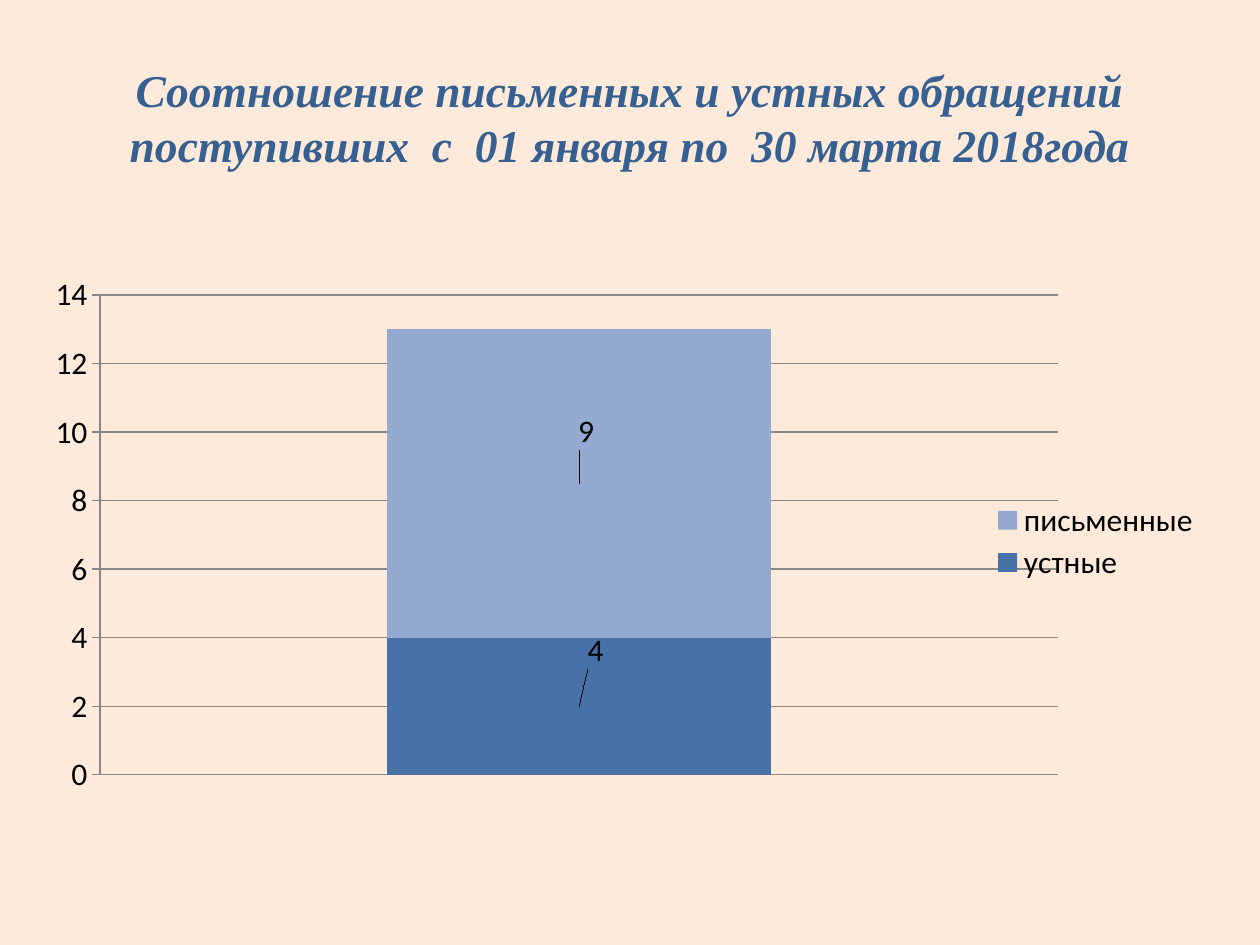
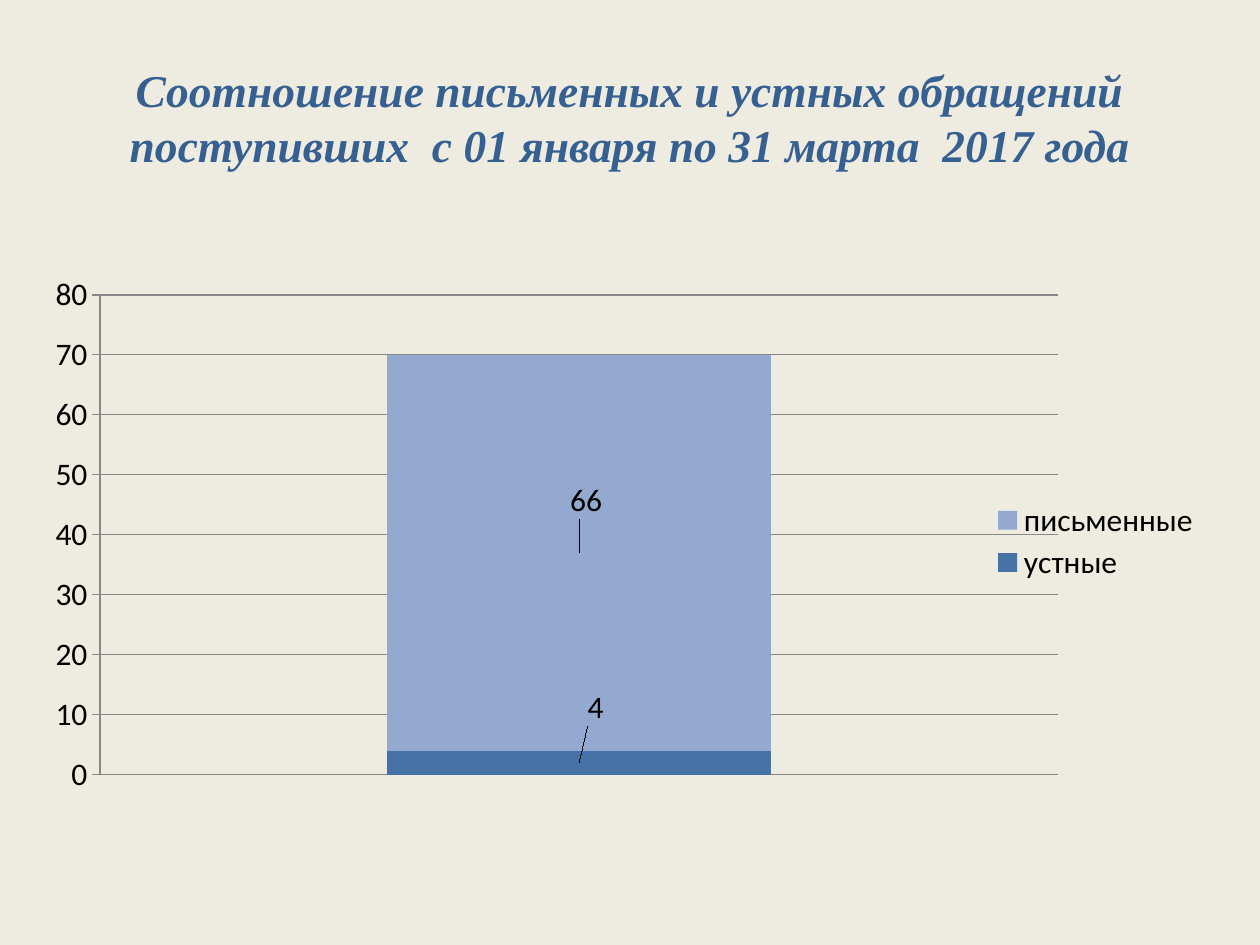
from dataclasses import dataclass

from lxml import etree
from pptx import Presentation
from pptx.chart.data import CategoryChartData
from pptx.dml.color import RGBColor
from pptx.enum.chart import XL_CHART_TYPE, XL_LABEL_POSITION, XL_LEGEND_POSITION, XL_TICK_MARK
from pptx.enum.text import MSO_ANCHOR, MSO_AUTO_SIZE, PP_ALIGN
from pptx.oxml.ns import qn
from pptx.util import Inches, Pt

STACKED = XL_CHART_TYPE.COLUMN_STACKED
LABEL_CENTER = XL_LABEL_POSITION.CENTER
LEGEND_RIGHT = XL_LEGEND_POSITION.RIGHT
TICK_OUT, TICK_NONE = XL_TICK_MARK.OUTSIDE, XL_TICK_MARK.NONE
MIDDLE, CENTER = MSO_ANCHOR.MIDDLE, PP_ALIGN.CENTER
NO_AUTOFIT = MSO_AUTO_SIZE.NONE
TITLE_ONLY = 5
COLS, ROWS = 100, 75


@dataclass(frozen=True)
class Theme:
    """Colours, fonts and type sizes shared by the slides."""
    title: str = "376092"
    text: str = "000000"
    grid: str = "878787"
    oral: str = "4672A8"
    written: str = "93A9CF"
    title_font: str = "Times New Roman"
    chart_font: str = "Calibri"
    title_size: int = 26
    chart_size: int = 18


THEME = Theme()
TITLE_BOX = (5, 3, 90, 12.5)
CHART_BOX = (2.3, 21.9, 93.8, 43.3)
PLOT_AREA = dict(x=6, y=2.7, w=81.1, h=88.7)
LEGEND_AREA = dict(x=81.5, y=40, w=17.5, h=16.5)
SERIES_COLORS = {"устные": THEME.oral, "письменные": THEME.written}
LABEL_SHIFTS = (dict(x=1.4, y=-10.3), dict(x=0.6, y=-9.6))

SLIDES = (
    dict(background="FDEADA", values=(4, 9), top=14, step=2,
         title="Соотношение письменных и устных обращений "
               "поступивших  с  01 января по  30 марта 2018года"),
    dict(background="EEECE1", values=(4, 66), top=80, step=10,
         title="Соотношение письменных и устных обращений\n"
               "поступивших  с 01 января по 31 марта  2017 года"),
)


def to_emu(prs, box):
    """Turn a box in grid columns and rows into slide lengths."""
    col, row = prs.slide_width / COLS, prs.slide_height / ROWS
    return [int(n * unit) for n, unit in zip(box, (col, row, col, row))]


def write_text(tf, text, font, size, color, bold=False, italic=False, align=CENTER):
    """Write formatted text as one paragraph, with line breaks at newlines."""
    p = tf.paragraphs[0]
    p.alignment = align
    for i, line in enumerate(text.split("\n")):
        if i:
            p.add_line_break()
        r = p.add_run()
        r.text = line
        r.font.name, r.font.size = font, Pt(size)
        r.font.bold, r.font.italic = bold, italic
        r.font.color.rgb = RGBColor.from_string(color)


def set_layout(parent, index, area, modes=()):
    """Place a chart part by percentages of the chart's size."""
    for old in parent.findall(qn("c:layout")):
        parent.remove(old)
    layout = etree.Element(qn("c:layout"))
    manual = etree.SubElement(layout, qn("c:manualLayout"))
    for tag, value in modes:
        etree.SubElement(manual, qn(f"c:{tag}")).set("val", value)
    for tag, percent in area.items():
        etree.SubElement(manual, qn(f"c:{tag}")).set("val", f"{percent / 100:.3f}")
    parent.insert(index, layout)


def set_line(line):
    """Give an axis or grid line the thin grey style."""
    line.color.rgb = RGBColor.from_string(THEME.grid)
    line.width = Pt(0.75)


def add_title(s, box, text):
    """Fill the title placeholder inside the box."""
    sp = s.shapes.title
    sp.left, sp.top, sp.width, sp.height = box
    tf = sp.text_frame
    tf.word_wrap, tf.auto_size, tf.vertical_anchor = True, NO_AUTOFIT, MIDDLE
    write_text(tf, text, THEME.title_font, THEME.title_size, THEME.title,
               bold=True, italic=True)


def format_axes(chart, top, step):
    """Hide the category axis and scale the value axis."""
    chart.category_axis.visible = False
    axis = chart.value_axis
    axis.minimum_scale, axis.maximum_scale, axis.major_unit = 0, top, step
    axis.major_tick_mark, axis.minor_tick_mark = TICK_OUT, TICK_NONE
    axis.has_major_gridlines = True
    set_line(axis.format.line)
    set_line(axis.major_gridlines.format.line)


def format_series(plot):
    """Colour the stacked parts and label their values."""
    plot.gap_width, plot.overlap, plot.vary_by_categories = 150, 100, False
    for series in plot.series:
        series.format.fill.solid()
        series.format.fill.fore_color.rgb = RGBColor.from_string(SERIES_COLORS[series.name])
        series.data_labels.show_value = True
        series.points[0].data_label.position = LABEL_CENTER


def add_ratio_chart(s, box, values, top, step):
    """Add the stacked column of oral and written requests."""
    data = CategoryChartData()
    data.categories = ["1"]
    for name, value in zip(SERIES_COLORS, values):
        data.add_series(name, [value])
    chart = s.shapes.add_chart(STACKED, *box, data).chart
    chart.has_title = False
    chart.font.name, chart.font.size = THEME.chart_font, Pt(THEME.chart_size)
    chart.font.color.rgb = RGBColor.from_string(THEME.text)
    format_axes(chart, top, step)
    format_series(chart.plots[0])
    chart.has_legend = True
    chart.legend.position = LEGEND_RIGHT
    chart.legend.include_in_layout = False

    edges = [("xMode", "edge"), ("yMode", "edge")]
    root = chart.element
    set_layout(root.find(".//" + qn("c:plotArea")), 0, PLOT_AREA,
               [("layoutTarget", "inner")] + edges)
    set_layout(root.find(".//" + qn("c:legend")), 1, LEGEND_AREA, edges)
    for label, shift in zip(root.iter(qn("c:dLbl")), LABEL_SHIFTS):
        set_layout(label, 1, shift)


def add_ratio_slide(prs, background, title, values, top, step):
    """Add a slide with a title and a ratio chart."""
    s = prs.slides.add_slide(prs.slide_layouts[TITLE_ONLY])
    s.background.fill.solid()
    s.background.fill.fore_color.rgb = RGBColor.from_string(background)
    add_title(s, to_emu(prs, TITLE_BOX), title)
    add_ratio_chart(s, to_emu(prs, CHART_BOX), values, top, step)


def main():
    """Build and save the presentation."""
    prs = Presentation()
    prs.slide_width, prs.slide_height = Inches(10), Inches(7.5)
    for slide in SLIDES:
        add_ratio_slide(prs, **slide)
    prs.save("out.pptx")


if __name__ == "__main__":
    main()
